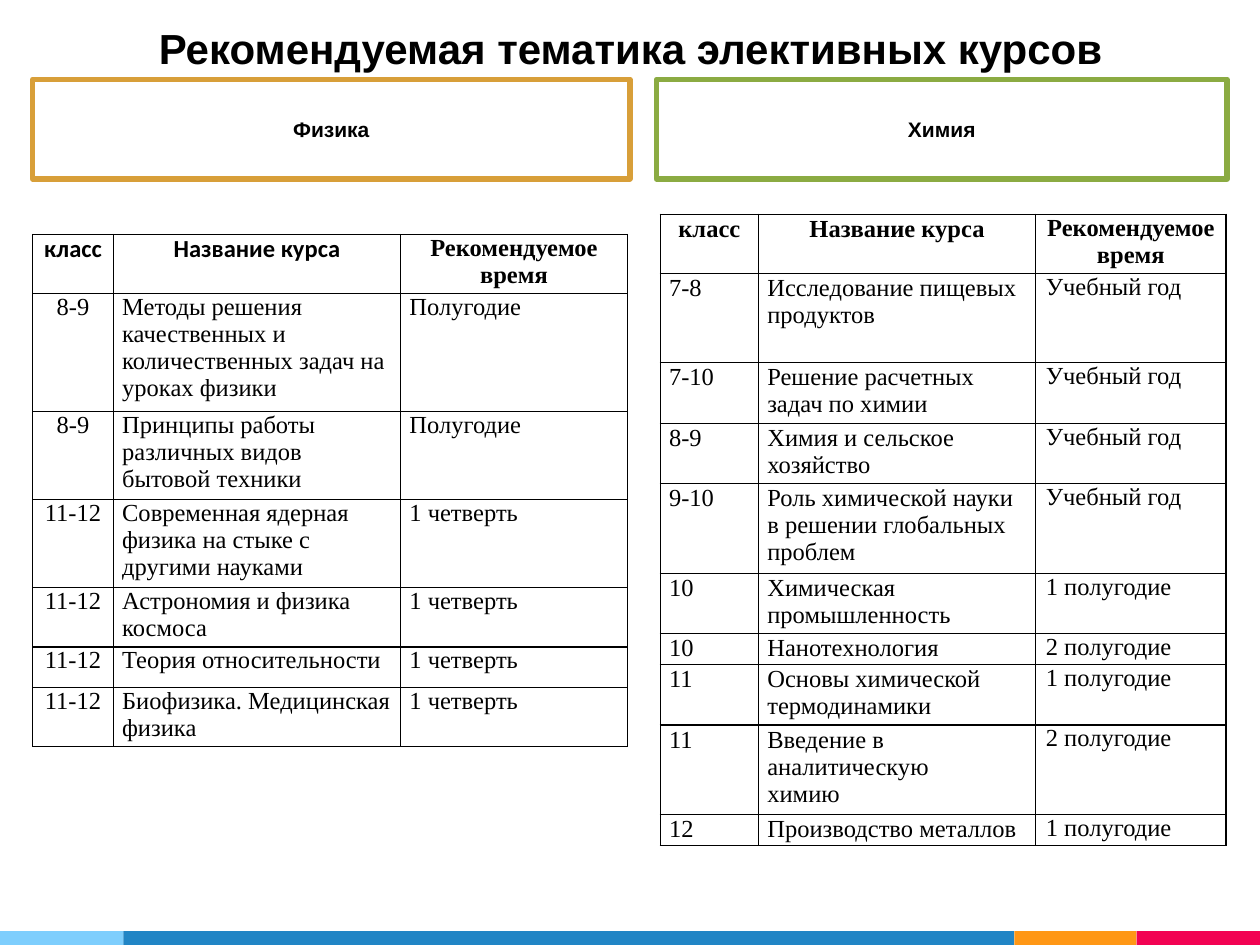
from lxml import etree
from pptx import Presentation
from pptx.dml.color import RGBColor
from pptx.enum import shapes, text
from pptx.oxml import ns
from pptx.util import Inches, Pt

BLACK = RGBColor(0x00, 0x00, 0x00)
WHITE = RGBColor(0xFF, 0xFF, 0xFF)
OCHRE = RGBColor(0xD8, 0x9F, 0x39)
GREEN = RGBColor(0x8B, 0xAB, 0x42)
SKY = RGBColor(0x7E, 0xCE, 0xFD)
BLUE = RGBColor(0x21, 0x85, 0xC5)
ORANGE = RGBColor(0xFF, 0x97, 0x15)
CRIMSON = RGBColor(0xF2, 0x02, 0x53)

LEFT, CENTER = text.PP_ALIGN.LEFT, text.PP_ALIGN.CENTER
SERIF = "Times New Roman"
HEADERS = ("класс", "Название курса", "Рекомендуемое время")

PHYSICS = [
    HEADERS,
    ("8-9", "Методы решения качественных и количественных задач на уроках физики", "Полугодие"),
    ("8-9", "Принципы работы различных видов бытовой техники", "Полугодие"),
    ("11-12", "Современная ядерная физика на стыке с другими науками", "1 четверть"),
    ("11-12", "Астрономия и физика космоса", "1 четверть"),
    ("11-12", "Теория относительности", "1 четверть"),
    ("11-12", "Биофизика. Медицинская физика", "1 четверть"),
]
CHEMISTRY = [
    HEADERS,
    ("7-8", "Исследование пищевых продуктов", "Учебный год"),
    ("7-10", "Решение расчетных задач по химии", "Учебный год"),
    ("8-9", "Химия и сельское хозяйство", "Учебный год"),
    ("9-10", "Роль химической науки в решении глобальных проблем", "Учебный год"),
    ("10", "Химическая промышленность", "1 полугодие"),
    ("10", "Нанотехнология", "2 полугодие"),
    ("11", "Основы химической термодинамики", "1 полугодие"),
    ("11", "Введение в аналитическую\nхимию", "2 полугодие"),
    ("12", "Производство металлов", "1 полугодие"),
]


def write(tf, words, size, font, bold=True, align=CENTER):
    tf.text = words
    formats = {"size": Pt(size), "name": font, "bold": bold}
    for p in tf.paragraphs:
        p.alignment = align
        for r in p.runs:
            r.font.color.rgb = BLACK
            for name, value in formats.items():
                setattr(r.font, name, value)


def add_title(s, words):
    sp = s.shapes.title
    box = {"left": 0.27, "top": 0.13, "width": 9.47, "height": 0.5}
    for name, value in box.items():
        setattr(sp, name, Inches(value))
    tf = sp.text_frame
    write(tf, words, 24, "Arial")
    tf.word_wrap = True
    tf.auto_size = text.MSO_AUTO_SIZE.SHAPE_TO_FIT_TEXT
    tf.vertical_anchor = text.MSO_ANCHOR.TOP


def add_box(s, left, top, width, height, fill, line=None):
    sp = s.shapes.add_shape(shapes.MSO_SHAPE.RECTANGLE, Inches(left), Inches(top),
                            Inches(width), Inches(height))
    sp.shadow.inherit = False
    sp.fill.solid()
    sp.fill.fore_color.rgb = fill
    if line is None:
        sp.line.fill.background()
    else:
        sp.line.color.rgb = line
        sp.line.width = Pt(3)
    return sp


def add_subject(s, left, width, words, color):
    tf = add_box(s, left, 0.63, width, 0.79, WHITE, color).text_frame
    write(tf, words, 12, "Arial")
    tf.vertical_anchor = text.MSO_ANCHOR.MIDDLE


def add_footer_strip(s):
    left = 0
    for width, color in ((0.98, SKY), (7.07, BLUE), (0.97, ORANGE), (0.98, CRIMSON)):
        add_box(s, left, 7.39, width, 0.11, color)
        left += width


def add_borders(cell):
    tc_pr = cell._tc.get_or_add_tcPr()
    for side in ("lnL", "lnR", "lnT", "lnB"):
        ln = etree.SubElement(tc_pr, ns.qn("a:" + side), w=str(Pt(0.75)))
        fill = etree.SubElement(ln, ns.qn("a:solidFill"))
        etree.SubElement(fill, ns.qn("a:srgbClr"), val=str(BLACK))


def add_course_table(s, left, top, widths, heights, rows, class_align, header_fonts, margins):
    """Margins are (left, right, top) per column, in inches."""
    frame = s.shapes.add_table(len(rows), len(widths), Inches(left), Inches(top),
                               Inches(sum(widths)), Inches(sum(heights)))
    table = frame.table
    table.first_row = table.horz_banding = False
    for column, width in zip(table.columns, widths):
        column.width = Inches(width)
    for row, height in zip(table.rows, heights):
        row.height = Inches(height)
    for i, values in enumerate(rows):
        for j, words in enumerate(values):
            cell = table.cell(i, j)
            header = i == 0
            align = CENTER if header else (class_align, LEFT, LEFT)[j]
            write(cell.text_frame, words, 14, header_fonts[j] if header else SERIF, header, align)
            start, end, above = margins[j]
            cell.margin_left = Inches(0 if header and end == 0 else start)
            cell.margin_right, cell.margin_top, cell.margin_bottom = Inches(end), Inches(above), 0
            add_borders(cell)
            cell.fill.background()


def main():
    prs = Presentation()
    prs.slide_width, prs.slide_height = Inches(10), Inches(7.5)
    s = prs.slides.add_slide(prs.slide_layouts[5])
    add_footer_strip(s)
    add_title(s, "Рекомендуемая тематика элективных курсов")
    add_subject(s, 0.26, 4.74, "Физика", OCHRE)
    add_subject(s, 5.21, 4.53, "Химия", GREEN)
    add_course_table(s, 0.26, 1.86, (0.64, 2.28, 1.8),
                     (0.47, 0.93, 0.7, 0.7, 0.47, 0.32, 0.47), PHYSICS, CENTER,
                     ("Calibri", "Calibri", SERIF), [(0.07, 0.07, 0)] * 3)
    add_course_table(s, 5.24, 1.7, (0.78, 2.2, 1.51),
                     (0.47, 0.71, 0.48, 0.48, 0.71, 0.48, 0.24, 0.48, 0.71, 0.24),
                     CHEMISTRY, LEFT, (SERIF,) * 3,
                     [(0.07, 0.07, 0.01), (0.07, 0.07, 0.01), (0.08, 0, 0)])
    prs.save("out.pptx")


if __name__ == "__main__":
    main()
